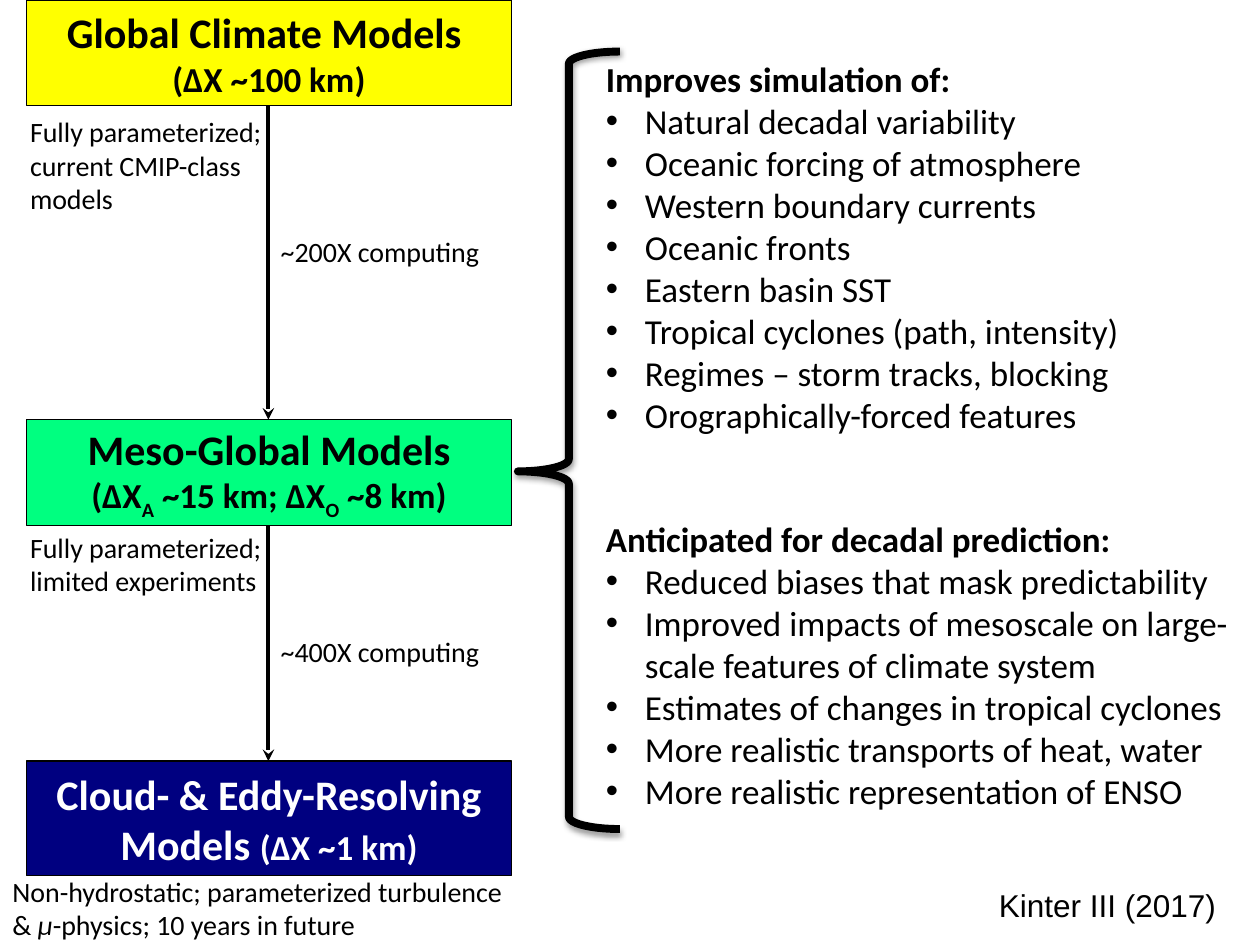
import pptx
import pptx.dml.color
import pptx.enum.shapes
import pptx.enum.text
import pptx.oxml
import pptx.oxml.ns
import pptx.util
from pptx.util import Inches

SHAPE = pptx.enum.shapes.MSO_SHAPE
ANCHOR = pptx.enum.text.MSO_ANCHOR
ALIGN = pptx.enum.text.PP_ALIGN
BLACK = "000000"
LEFT, MIDDLE, WIDTH = 0.21, 2.13, 3.85
NS = pptx.oxml.ns.nsdecls("a")
HEAD = {"size": 24, "bold": True}
SUB = {"size": 20, "bold": True}
LOW = {**SUB, "baseline": -25000}
ITEM = {"size": 20}
NOTE = {"size": 16}

GLOBAL = [[("Global Climate Models ", HEAD)], [("(ΔX ~100 km)", SUB)]]
MESO = [
    [("Meso-Global Models", HEAD)],
    [("(ΔX", SUB), ("A", LOW), (" ~15 km; ΔX", SUB), ("O", LOW), (" ~8 km)", SUB)],
]
CLOUD = [[("Cloud- & Eddy-Resolving Models ", HEAD), ("(ΔX ~1 km)", SUB)]]
IMPROVES = [
    "Natural decadal variability",
    "Oceanic forcing of atmosphere",
    "Western boundary currents",
    "Oceanic fronts",
    "Eastern basin SST",
    "Tropical cyclones (path, intensity)",
    "Regimes – storm tracks, blocking",
    "Orographically-forced features",
]
ANTICIPATED = [
    "Reduced biases that mask predictability",
    "Improved impacts of mesoscale on large-scale features of climate system",
    "Estimates of changes in tropical cyclones",
    "More realistic transports of heat, water",
    "More realistic representation of ENSO",
]


def rgb(color):
    return pptx.dml.color.RGBColor.from_string(color)


def set_line(line, width):
    line.color.rgb = rgb(BLACK)
    line.width = pptx.util.Pt(width)


def add_run(p, text, formats, color):
    r = p.add_run()
    r.text = text
    r.font.name = "Calibri"
    r.font.color.rgb = rgb(color)
    for name, value in formats.items():
        if name == "baseline":
            r._r.get_or_add_rPr().set(name, str(value))
        else:
            setattr(r.font, name, pptx.util.Pt(value) if name == "size" else value)


def fill_text(tf, paragraphs, color=BLACK, align=ALIGN.LEFT, anchor=ANCHOR.TOP):
    tf.word_wrap = True
    tf.vertical_anchor = anchor
    for i, runs in enumerate(paragraphs):
        p = tf.add_paragraph() if i else tf.paragraphs[0]
        p.alignment = align
        for text, formats in runs:
            add_run(p, text, formats, color)


def add_box(s, top, height, fill, paragraphs, color=BLACK):
    sp = s.shapes.add_shape(SHAPE.RECTANGLE, Inches(LEFT), Inches(top), Inches(WIDTH), Inches(height))
    sp.shadow.inherit = False
    sp.fill.solid()
    sp.fill.fore_color.rgb = rgb(fill)
    set_line(sp.line, 0.75)
    fill_text(sp.text_frame, paragraphs, color, ALIGN.CENTER, ANCHOR.MIDDLE)


def add_text(s, left, top, width, height, paragraphs):
    sp = s.shapes.add_textbox(Inches(left), Inches(top), Inches(width), Inches(height))
    fill_text(sp.text_frame, paragraphs)
    return sp.text_frame


def add_list(s, top, height, heading, items):
    paragraphs = [[(heading, SUB)]] + [[(item, ITEM)] for item in items]
    tf = add_text(s, 4.71, top, 5.29, height, paragraphs)
    for p in tf.paragraphs[1:]:
        pPr = p._p.get_or_add_pPr()
        for name, value in {"marL": 0.31, "indent": -0.31}.items():
            pPr.set(name, str(Inches(value)))
        for xml in (f'<a:buFont {NS} typeface="Arial"/>', f'<a:buChar {NS} char="•"/>'):
            pPr.append(pptx.oxml.parse_xml(xml))


def add_arrow(s, top, bottom):
    sp = s.shapes.add_connector(
        pptx.enum.shapes.MSO_CONNECTOR.STRAIGHT,
        Inches(MIDDLE), Inches(top), Inches(MIDDLE), Inches(bottom),
    )
    set_line(sp.line, 2.25)
    sp.line._get_or_add_ln().append(pptx.oxml.parse_xml(f'<a:tailEnd {NS} type="stealth"/>'))
    sp._element.spPr.append(pptx.oxml.parse_xml(f"<a:effectLst {NS}/>"))


def add_brace(s):
    sp = s.shapes.add_shape(SHAPE.LEFT_BRACE, Inches(4.11), Inches(0.41), Inches(0.81), Inches(6.17))
    sp.adjustments[0] = 0.12
    sp.adjustments[1] = 0.54
    sp.fill.background()
    set_line(sp.line, 4.5)
    sp._element.spPr.append(pptx.oxml.parse_xml(
        f'<a:effectLst {NS}><a:outerShdw blurRad="40000" dist="20000" dir="5400000" rotWithShape="0">'
        f'<a:srgbClr val="{BLACK}"><a:alpha val="38000"/></a:srgbClr></a:outerShdw></a:effectLst>'
    ))


def main():
    prs = pptx.Presentation()
    prs.slide_width, prs.slide_height = Inches(10), Inches(7.5)
    s = prs.slides.add_slide(prs.slide_layouts.get_by_name("Blank"))

    add_box(s, 0, 0.84, "FFFF00", GLOBAL)
    add_box(s, 6.04, 0.91, "000080", CLOUD, "FFFFFF")
    add_box(s, 3.33, 0.84, "00FF80", MESO)
    add_arrow(s, 0.84, 3.33)
    add_arrow(s, 4.17, 6.04)

    for left, top, width, height, text in (
        (2.13, 1.81, 2.17, 0.37, "~200X computing"),
        (2.13, 4.99, 2.17, 0.37, "~400X computing"),
        (0.14, 0.86, 2.17, 0.91, "Fully parameterized; current CMIP-class models"),
        (0.14, 4.16, 2.1, 0.64, "Fully parameterized; limited experiments"),
    ):
        add_text(s, left, top, width, height, [[(text, NOTE)]])
    add_text(s, 0, 6.89, 4.09, 0.64, [[
        ("Non-hydrostatic; parameterized turbulence & ", NOTE),
        ("μ", {**NOTE, "italic": True}),
        ("-physics; 10 years in future", NOTE),
    ]])

    add_list(s, 0.41, 3.13, "Improves simulation of:", IMPROVES)
    add_brace(s)
    add_list(s, 4.06, 2.79, "Anticipated for decadal prediction:", ANTICIPATED)
    add_text(s, 7.83, 6.98, 2.13, 0.51, [[("Kinter III (2017)", {"size": 18, "name": "Arial"})]])
    prs.save("out.pptx")


if __name__ == "__main__":
    main()
